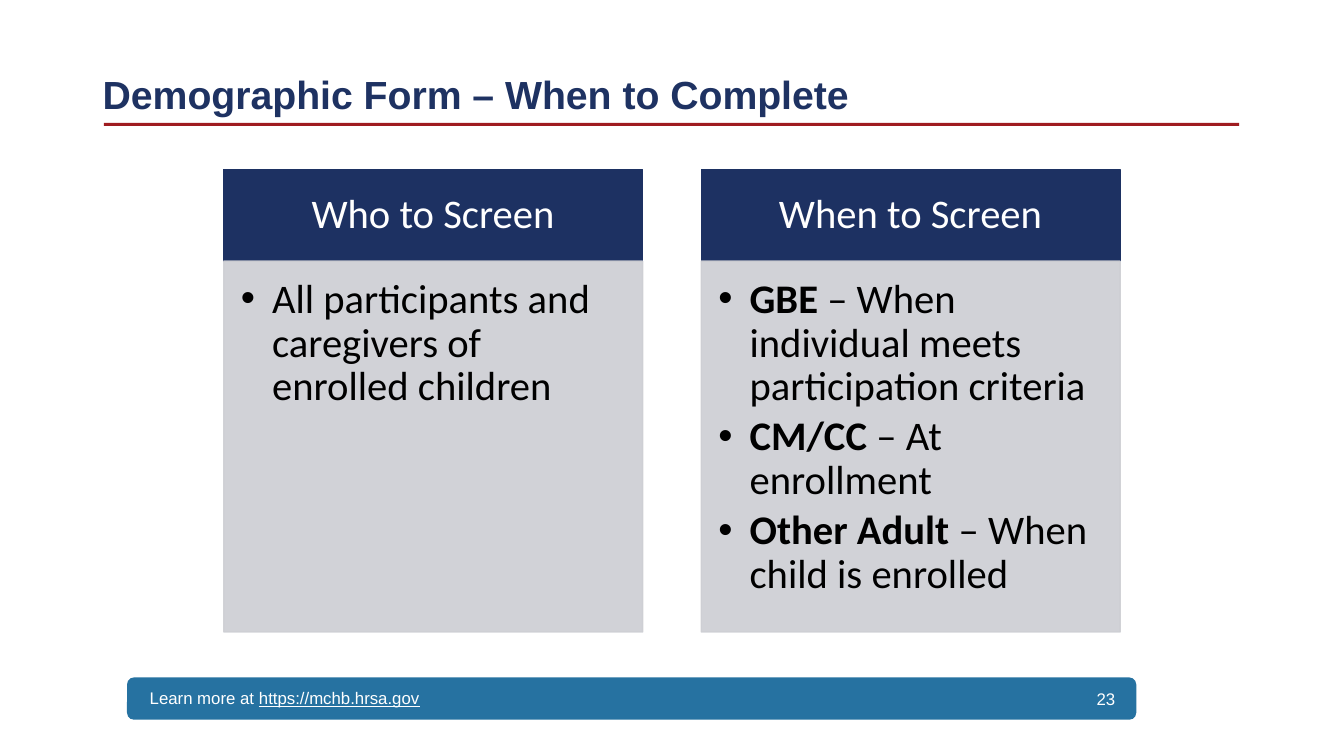
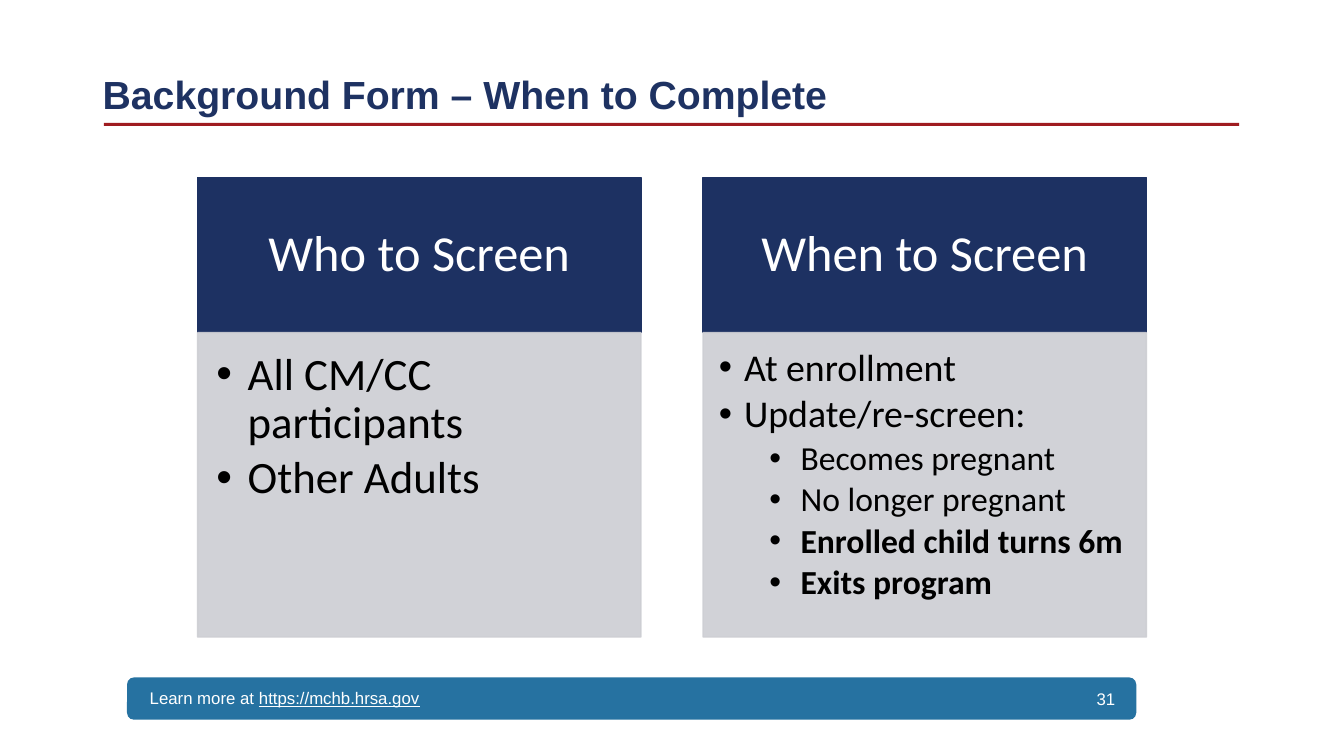
from dataclasses import dataclass

from lxml import etree
from pptx import Presentation
from pptx.dml.color import RGBColor
from pptx.enum.shapes import MSO_SHAPE
from pptx.enum.text import MSO_ANCHOR, PP_ALIGN
from pptx.oxml.ns import qn
from pptx.util import Inches, Pt

COLORS = {
    "title": "1E3262",
    "header": "1D3162",
    "panel": "CDCED3",
    "rule": "9F1C20",
    "footer": "2672A1",
    "white": "FFFFFF",
    "black": "000000",
}
HEADING_FONT = "Arial"
BODY_FONT = "Calibri"
COLUMN_GAP = 0.14  # share of the column width


@dataclass
class Bullet:
    text: str
    size: int
    lead: str = ""  # bold words before the text
    margin: float = 0.31
    hanging: float = 0.31
    level: int = 1


@dataclass
class Column:
    heading: str
    bullets: list


def color(name):
    return RGBColor.from_string(COLORS[name])


def add_box(slide, box, fill, kind=MSO_SHAPE.RECTANGLE, line=None, opacity=100):
    shape = slide.shapes.add_shape(kind, *map(Inches, box))
    shape.shadow.inherit = False
    shape.fill.solid()
    shape.fill.fore_color.rgb = color(fill)
    if line:
        shape.line.color.rgb = color(line)
        shape.line.width = Pt(1)
    else:
        shape.line.fill.background()
    if opacity < 100:
        for rgb in shape._element.spPr.iter(qn("a:srgbClr")):
            etree.SubElement(rgb, qn("a:alpha")).set("val", str(opacity * 1000))
    return shape


def add_text_box(slide, box):
    return slide.shapes.add_textbox(*map(Inches, box))


def set_frame(shape, anchor, insets=(0.1, 0.05, 0.1, 0.05)):
    frame = shape.text_frame
    frame.word_wrap = True
    frame.vertical_anchor = anchor
    frame.margin_left, frame.margin_top, frame.margin_right, frame.margin_bottom = map(
        Inches, insets)
    return frame


def add_run(paragraph, text, size=12, font=HEADING_FONT, fill="white",
            bold=False, underline=False):
    run = paragraph.add_run()
    run.text = text
    run.font.size = Pt(size)
    run.font.name = font
    run.font.color.rgb = color(fill)
    run.font.bold = bold
    run.font.underline = underline


def write_line(shape, text, anchor=MSO_ANCHOR.MIDDLE, align=PP_ALIGN.LEFT,
               spacing=1.0, insets=(0.1, 0.05, 0.1, 0.05), **style):
    paragraph = set_frame(shape, anchor, insets).paragraphs[0]
    paragraph.alignment = align
    paragraph.line_spacing = spacing
    add_run(paragraph, text, **style)
    return paragraph


def scaled_insets(size, *points):
    """Insets in inches that grow with the text size."""
    return [size * point / 72 for point in points]


def write_bullets(shape, bullets):
    insets = scaled_insets(bullets[0].size, 0.42, 0.42, 0.56, 0.63)
    frame = set_frame(shape, MSO_ANCHOR.TOP, insets)
    for index, bullet in enumerate(bullets):
        paragraph = frame.add_paragraph() if index else frame.paragraphs[0]
        paragraph.alignment = PP_ALIGN.LEFT
        paragraph.level = bullet.level
        paragraph.line_spacing = 0.9
        paragraph.space_before = Pt(0)
        paragraph.space_after = Pt(bullet.size * 0.15)
        properties = paragraph._p.get_or_add_pPr()
        properties.set("marL", str(Inches(bullet.margin)))
        properties.set("indent", str(-Inches(bullet.hanging)))
        etree.SubElement(properties, qn("a:buFont")).set("typeface", "Arial")
        etree.SubElement(properties, qn("a:buChar")).set("char", "•")
        for text, bold in ((bullet.lead, True), (bullet.text, False)):
            if text:
                add_run(paragraph, text, size=bullet.size, font=BODY_FONT,
                        fill="black", bold=bold)


def add_footer(slide, box, number):
    left, top, width, height = box
    add_box(slide, box, "footer", MSO_SHAPE.ROUNDED_RECTANGLE)
    link = write_line(add_text_box(slide, (left + 0.03, top, 2.97, 0.4)),
                      "Learn more at ", align=PP_ALIGN.RIGHT)
    add_run(link, "https://mchb.hrsa.gov", underline=True)
    write_line(add_text_box(slide, (left + width - 0.52, top + 0.01, 0.41, 0.4)),
               str(number), align=PP_ALIGN.RIGHT)


def add_title(slide, box, text):
    left, top, width, height = box
    add_box(slide, (left + 0.11, top + height, width - 0.24, 0.03), "rule")
    write_line(add_text_box(slide, box), text, anchor=MSO_ANCHOR.BOTTOM,
               spacing=0.9, size=28, fill="title", bold=True)


def add_columns(slide, box, columns, header_height, header_size):
    left, top, width, height = box
    count = len(columns)
    column_width = width / (count + COLUMN_GAP * (count - 1))
    for index, column in enumerate(columns):
        x = left + index * column_width * (1 + COLUMN_GAP)
        # Heading band
        header = add_box(slide, (x, top, column_width, header_height),
                         "header", line="header")
        write_line(header, column.heading, align=PP_ALIGN.CENTER, spacing=0.9,
                   insets=scaled_insets(header_size, 0.56, 0.32, 0.56, 0.32),
                   size=header_size, font=BODY_FONT)
        # Bullet panel
        panel = add_box(slide, (x, top + header_height, column_width,
                                height - header_height),
                        "panel", line="panel", opacity=90)
        write_bullets(panel, column.bullets)


def add_form_slide(presentation, title, number, box, columns, header_height,
                   header_size):
    slide = presentation.slides.add_slide(presentation.slide_layouts[6])
    add_footer(slide, (1.26, 6.72, 10.01, 0.42), number)
    add_title(slide, (0.92, 0.2, 11.5, 1.02), title)
    add_columns(slide, box, columns, header_height, header_size)


def main():
    presentation = Presentation()
    presentation.slide_width = Inches(13.33)
    presentation.slide_height = Inches(7.5)

    # Demographic form
    add_form_slide(
        presentation, "Demographic Form – When to Complete", 23,
        (2.22, 1.68, 8.89, 4.59),
        [
            Column("Who to Screen", [
                Bullet("All participants and caregivers of enrolled children", 29),
            ]),
            Column("When to Screen", [
                Bullet(" – When individual meets participation criteria", 29, "GBE"),
                Bullet("– At enrollment", 29, "CM/CC "),
                Bullet("– When child is enrolled", 29, "Other Adult "),
            ]),
        ],
        header_height=0.91, header_size=29)

    # Background form
    main_point = {"size": 27, "margin": 0.25, "hanging": 0.25}
    sub_point = {"size": 24, "margin": 0.81, "level": 2}
    add_form_slide(
        presentation, "Background Form – When to Complete", 31,
        (1.96, 1.76, 9.41, 4.56),
        [
            Column("Who to Screen", [
                Bullet("All CM/CC participants", 32),
                Bullet("Other Adults", 32),
            ]),
            Column("When to Screen", [
                Bullet("At enrollment", **main_point),
                Bullet("Update/re-screen:", **main_point),
                Bullet("Becomes pregnant", **sub_point),
                Bullet("No longer pregnant", **sub_point),
                Bullet("", lead="Enrolled child turns 6m", **sub_point),
                Bullet("", lead="Exits program", **sub_point),
            ]),
        ],
        header_height=1.54, header_size=36)

    presentation.save("out.pptx")


if __name__ == "__main__":
    main()
